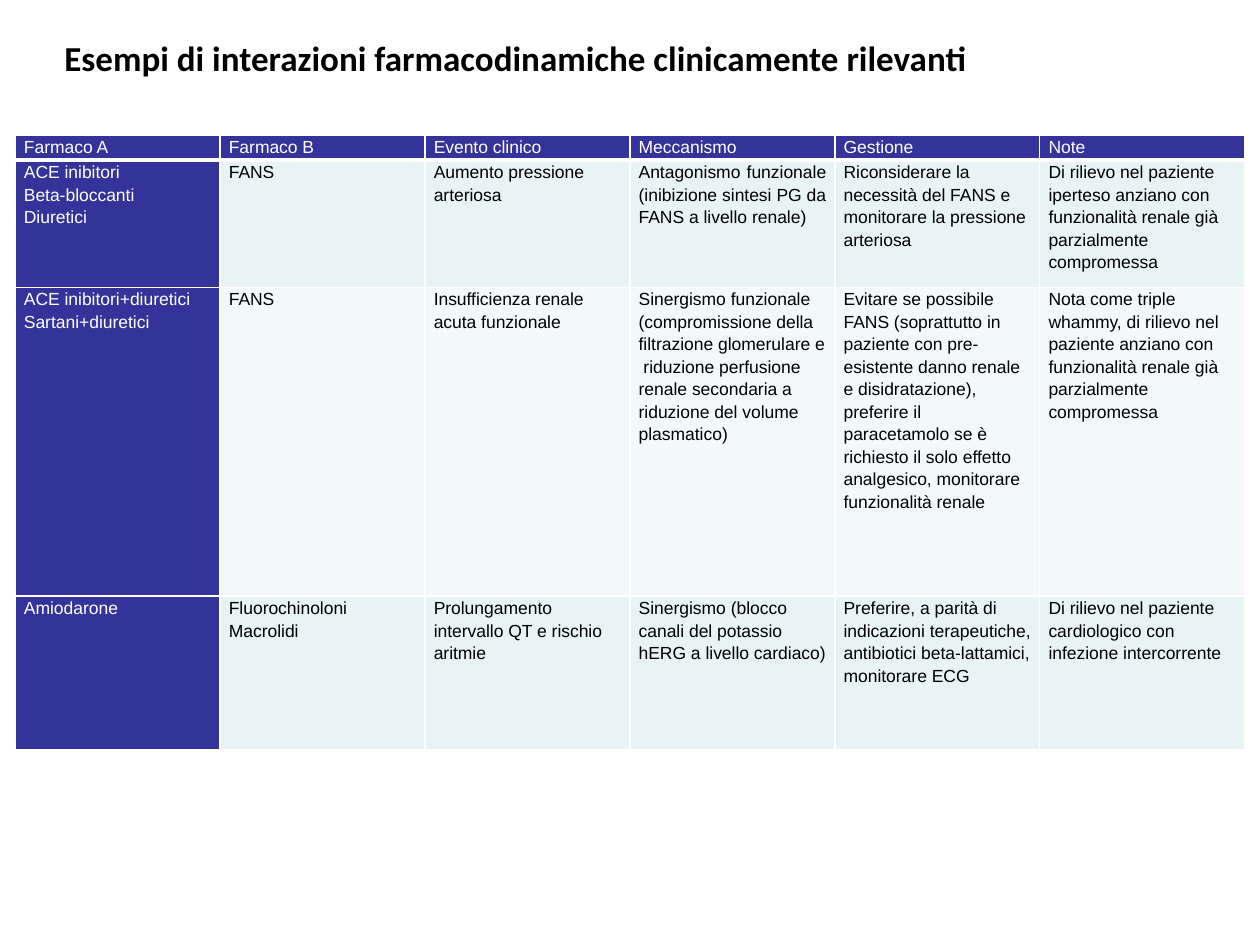
import pptx
import pptx.dml.color
import pptx.enum.text
import pptx.oxml
import pptx.oxml.ns
import pptx.util
from pptx.util import Inches

COLORS = {
    "header": "333399",
    "odd": "E7F3F4",
    "even": "F3F9FA",
    "light": "FFFFFF",
    "dark": "000000",
}

ROWS = [
    ["Farmaco A", "Farmaco B", "Evento clinico", "Meccanismo", "Gestione", "Note"],
    [
        "ACE inibitori\nBeta-bloccanti\nDiuretici",
        "FANS",
        "Aumento pressione arteriosa",
        "Antagonismo funzionale (inibizione sintesi PG da FANS a livello renale)",
        "Riconsiderare la necessità del FANS e monitorare la pressione arteriosa",
        "Di rilievo nel paziente iperteso anziano con funzionalità renale già "
        "parzialmente compromessa",
    ],
    [
        "ACE inibitori+diuretici\nSartani+diuretici",
        "FANS",
        "Insufficienza renale acuta funzionale",
        "Sinergismo funzionale (compromissione della filtrazione glomerulare e "
        " riduzione perfusione renale secondaria a riduzione del volume plasmatico)",
        "Evitare se possibile FANS (soprattutto in paziente con pre-esistente danno "
        "renale e disidratazione), preferire il paracetamolo se è richiesto il solo "
        "effetto analgesico, monitorare funzionalità renale",
        "Nota come triple whammy, di rilievo nel paziente anziano con funzionalità "
        "renale già parzialmente compromessa",
    ],
    [
        "Amiodarone",
        "Fluorochinoloni\nMacrolidi",
        "Prolungamento intervallo QT e rischio aritmie",
        "Sinergismo (blocco canali del potassio hERG a livello cardiaco)",
        "Preferire, a parità di indicazioni terapeutiche, antibiotici beta-lattamici, "
        "monitorare ECG",
        "Di rilievo nel paziente cardiologico con infezione intercorrente",
    ],
]
ROW_HEIGHTS = [0.2, 1.01, 2.45, 1.22]


def rgb(name):
    return pptx.dml.color.RGBColor.from_string(COLORS[name])


def add_borders(cell, bottom_width):
    """Draw white lines on the four sides; they must precede the cell fill."""
    properties = cell._tc.get_or_add_tcPr()
    widths = {"lnL": 1, "lnR": 1, "lnT": 1, "lnB": bottom_width}
    for position, (side, width) in enumerate(widths.items()):
        line = pptx.oxml.parse_xml(
            f'<a:{side} {pptx.oxml.ns.nsdecls("a")} w="{pptx.util.Pt(width)}">'
            f'<a:solidFill><a:srgbClr val="{COLORS["light"]}"/></a:solidFill></a:{side}>'
        )
        properties.insert(position, line)


deck = pptx.Presentation()
deck.slide_width, deck.slide_height = Inches(10), Inches(7.5)
page = deck.slides.add_slide(deck.slide_layouts[6])

# Interaction table
table = page.shapes.add_table(
    len(ROWS), len(ROWS[0]), Inches(0.12), Inches(1.07), Inches(9.76), Inches(4.88)
).table
table.first_row = False
table.horz_banding = False
for row, height in zip(table.rows, ROW_HEIGHTS):
    row.height = Inches(height)

for row_index, texts in enumerate(ROWS):
    for column_index, text in enumerate(texts):
        is_header = row_index == 0 or column_index == 0
        band = "odd" if row_index % 2 else "even"
        cell = table.cell(row_index, column_index)
        cell.margin_left = cell.margin_right = Inches(0.07)
        cell.margin_top = cell.margin_bottom = 0
        cell.fill.solid()
        cell.fill.fore_color.rgb = rgb("header" if is_header else band)
        add_borders(cell, bottom_width=3 if row_index == 0 else 1)

        para = cell.text_frame.paragraphs[0]
        para.text = text
        para.line_spacing = 1.15
        para.space_before = para.space_after = pptx.util.Pt(3)
        para.font.name = "Arial"
        para.font.size = pptx.util.Pt(10)
        para.font.color.rgb = rgb("light" if is_header else "dark")

# The first mechanism is the only justified cell
table.cell(1, 3).text_frame.paragraphs[0].alignment = pptx.enum.text.PP_ALIGN.JUSTIFY

# Title
box = page.shapes.add_textbox(Inches(0.35), Inches(0.24), Inches(7.48), Inches(0.44))
frame = box.text_frame
frame.word_wrap = False
frame.auto_size = pptx.enum.text.MSO_AUTO_SIZE.SHAPE_TO_FIT_TEXT
frame.vertical_anchor = pptx.enum.text.MSO_ANCHOR.MIDDLE
para = frame.paragraphs[0]
para.text = " Esempi di interazioni farmacodinamiche clinicamente rilevanti"
para.font.name = "Calibri"
para.font.size = pptx.util.Pt(20)
para.font.bold = True
para.font.color.rgb = rgb("dark")

deck.save("out.pptx")
